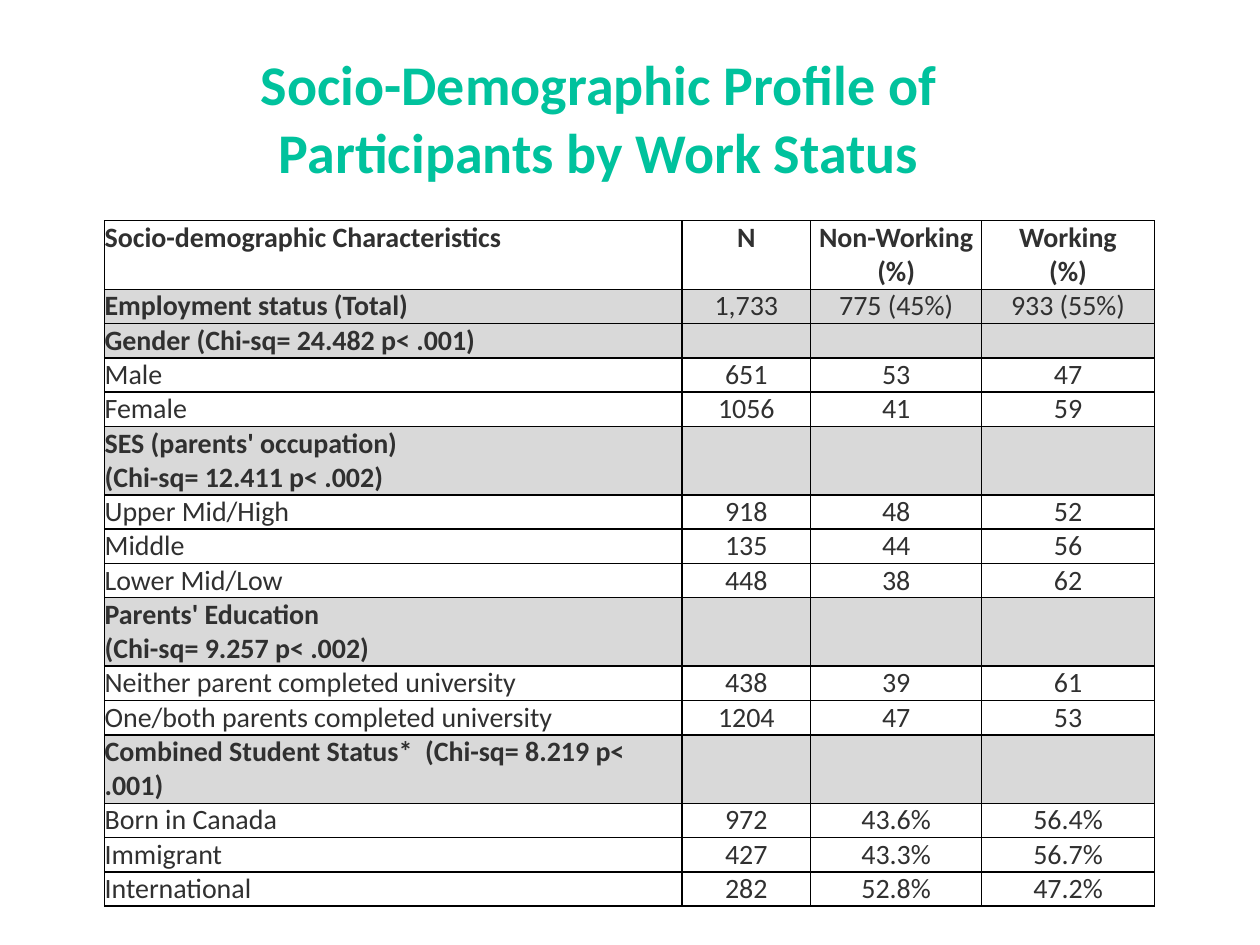
from lxml import etree
from pptx import Presentation
from pptx import util as u
from pptx.dml.color import RGBColor
from pptx.enum import text
from pptx.oxml.ns import qn

HEADER, SECTION, DETAIL = "header", "section", "detail"
COLUMN_WIDTHS = [11.64, 2.59, 3.45, 3.48]
LINE_HEIGHT = 0.67
ROWS = [
    (HEADER, 2, ["Socio-demographic Characteristics", "N", "Non-Working (%)", "Working\n(%)"]),
    (SECTION, 1, ["Employment status (Total)", "1,733", "775 (45%)", "933 (55%)"]),
    (SECTION, 1, ["Gender (Chi-sq= 24.482 p< .001)", "", "", ""]),
    (DETAIL, 1, ["Male", "651", "53", "47"]),
    (DETAIL, 1, ["Female", "1056", "41", "59"]),
    (SECTION, 2, ["SES (parents' occupation)\n(Chi-sq= 12.411 p< .002)", "", "", ""]),
    (DETAIL, 1, ["Upper Mid/High", "918", "48", "52"]),
    (DETAIL, 1, ["Middle", "135", "44", "56"]),
    (DETAIL, 1, ["Lower Mid/Low", "448", "38", "62"]),
    (SECTION, 2, ["Parents' Education\n(Chi-sq= 9.257 p< .002)", "", "", ""]),
    (DETAIL, 1, ["Neither parent completed university", "438", "39", "61"]),
    (DETAIL, 1, ["One/both parents completed university", "1204", "47", "53"]),
    (SECTION, 2, ["Combined Student Status*  (Chi-sq= 8.219 p< .001)", "", "", ""]),
    (DETAIL, 1, ["Born in Canada", "972", "43.6%", "56.4%"]),
    (DETAIL, 1, ["Immigrant", "427", "43.3%", "56.7%"]),
    (DETAIL, 1, ["International", "282", "52.8%", "47.2%"]),
]


def color(hex_string):
    return RGBColor.from_string(hex_string)


class ProfileSlide:
    font_name = "Calibri"
    title_color = "00C29D"
    text_color = "303030"
    section_fill = "D9D9D9"
    border_color = "000000"
    title_size = 32
    table_size = 16

    def __init__(self, presentation):
        self.slide = presentation.slides.add_slide(presentation.slide_layouts[5])

    def format_paragraph(self, paragraph, size, hex_string, bold, centered):
        paragraph.alignment = text.PP_ALIGN.CENTER if centered else text.PP_ALIGN.LEFT
        for run in paragraph.runs:
            run.font.name = self.font_name
            run.font.size = u.Pt(size)
            run.font.bold = bold
            run.font.color.rgb = color(hex_string)

    def add_title(self, wording, left, top, width, height):
        title = self.slide.shapes.title
        title.left, title.top = u.Cm(left), u.Cm(top)
        title.width, title.height = u.Cm(width), u.Cm(height)
        frame = title.text_frame
        frame.text = wording
        frame.word_wrap = True
        frame.auto_size = text.MSO_AUTO_SIZE.NONE
        frame.margin_left = frame.margin_right = u.Cm(0.13)
        frame.margin_top = frame.margin_bottom = u.Cm(0.13)
        self.format_paragraph(frame.paragraphs[0], self.title_size, self.title_color, True, True)

    def add_borders(self, cell):
        properties = cell._tc.get_or_add_tcPr()
        for position, side in enumerate(("lnL", "lnR", "lnT", "lnB")):
            line = etree.Element(qn(f"a:{side}"), w=str(u.Pt(1)))
            fill = etree.SubElement(line, qn("a:solidFill"))
            etree.SubElement(fill, qn("a:srgbClr"), val=self.border_color)
            properties.insert(position, line)

    def format_cell(self, cell, wording, kind, column):
        cell.text = wording
        cell.margin_left = cell.margin_right = 0
        cell.margin_top = cell.margin_bottom = 0
        if kind == SECTION:
            cell.fill.solid()
            cell.fill.fore_color.rgb = color(self.section_fill)
        else:
            cell.fill.background()
        bold = kind == HEADER or (kind == SECTION and column == 0)
        for paragraph in cell.text_frame.paragraphs:
            self.format_paragraph(paragraph, self.table_size, self.text_color, bold, column > 0)
            if not paragraph.runs:
                # The end mark sets the line height of an empty cell.
                end_mark = etree.SubElement(paragraph._p, qn("a:endParaRPr"))
                end_mark.set("sz", str(self.table_size * 100))
        self.add_borders(cell)

    def add_table(self, rows, widths, left, top):
        height = LINE_HEIGHT * sum(lines for _, lines, _ in rows)
        frame = self.slide.shapes.add_table(
            len(rows), len(widths), u.Cm(left), u.Cm(top), u.Cm(sum(widths)), u.Cm(height))
        table = frame.table
        table.first_row = table.horz_banding = False
        for column, width in zip(table.columns, widths):
            column.width = u.Cm(width)
        for row, (kind, lines, values) in zip(table.rows, rows):
            row.height = u.Cm(LINE_HEIGHT * lines)
            for column, (cell, wording) in enumerate(zip(row.cells, values)):
                self.format_cell(cell, wording, kind, column)


def main():
    presentation = Presentation()
    presentation.slide_width, presentation.slide_height = u.Cm(25.4), u.Cm(19.05)
    profile = ProfileSlide(presentation)
    profile.add_title("Socio-Demographic Profile of Participants by Work Status",
                      2.46, 0.86, 19.23, 3)
    profile.add_table(ROWS, COLUMN_WIDTHS, 2.11, 4.45)
    presentation.save("out.pptx")


if __name__ == "__main__":
    main()
